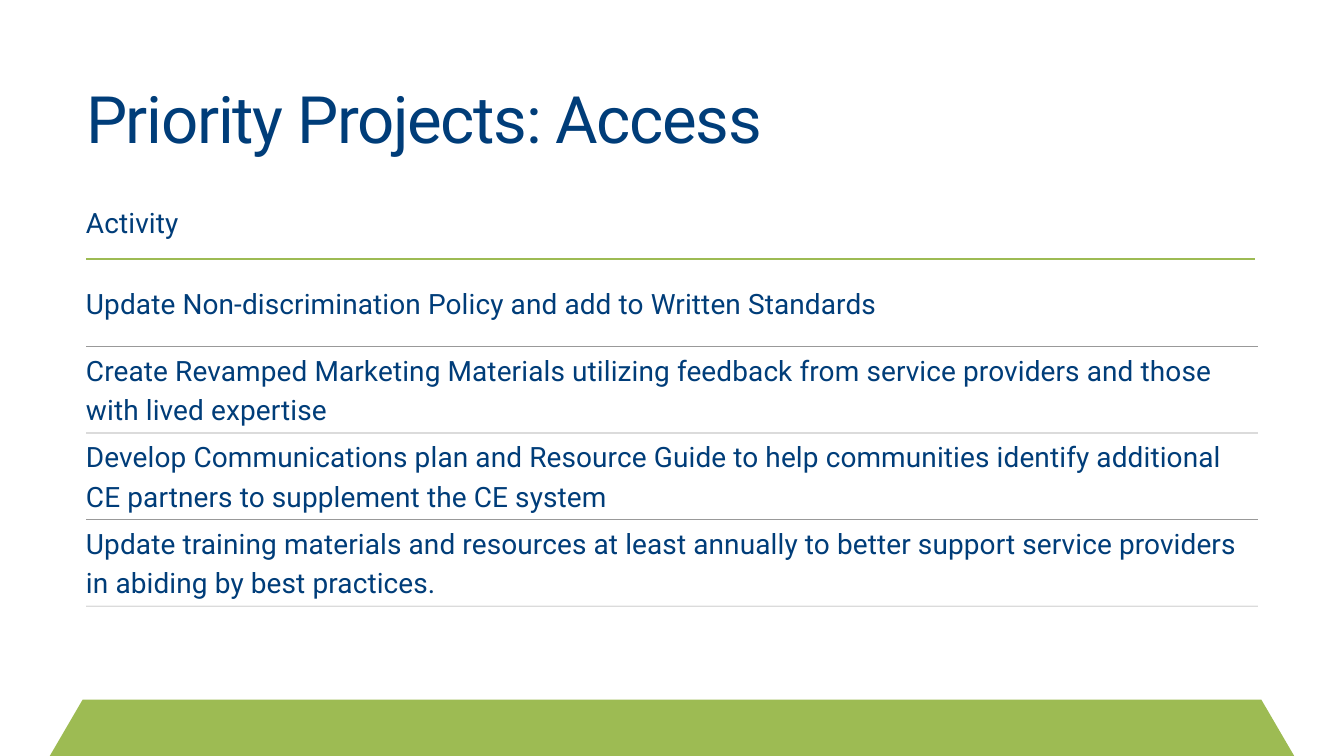
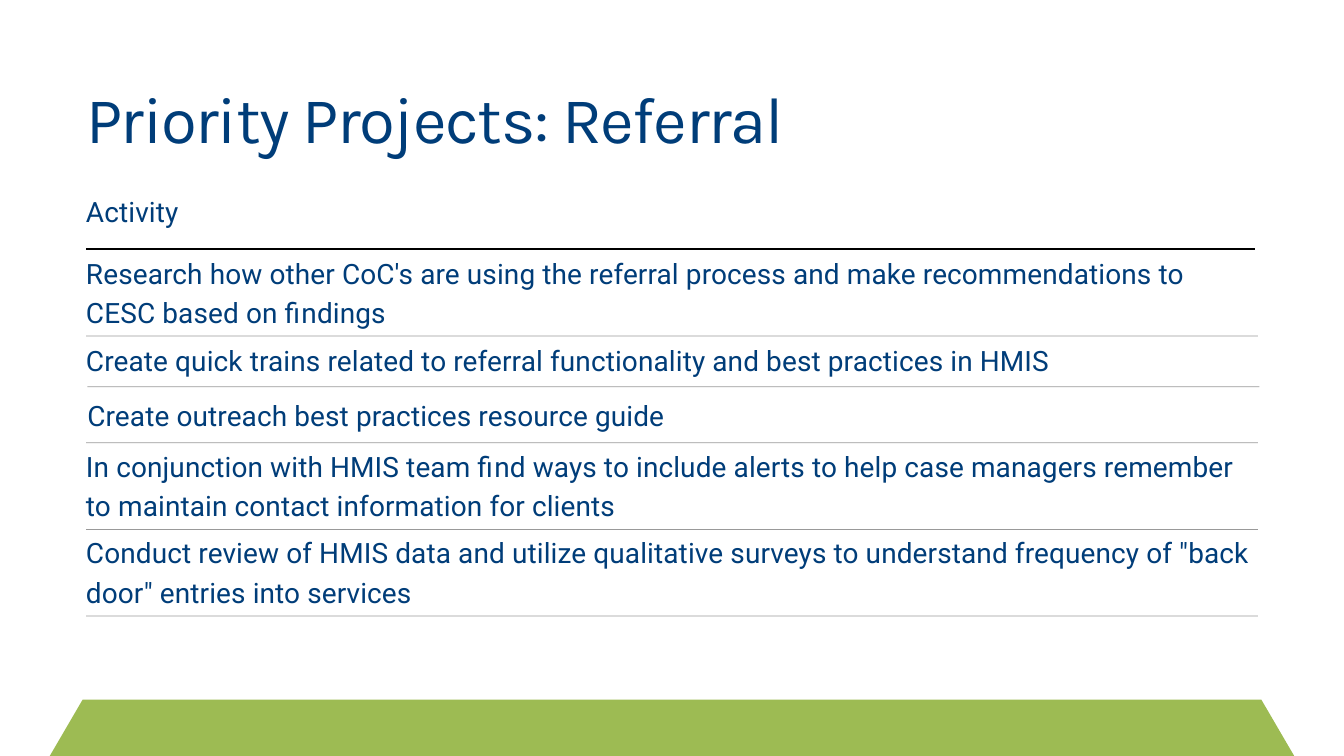
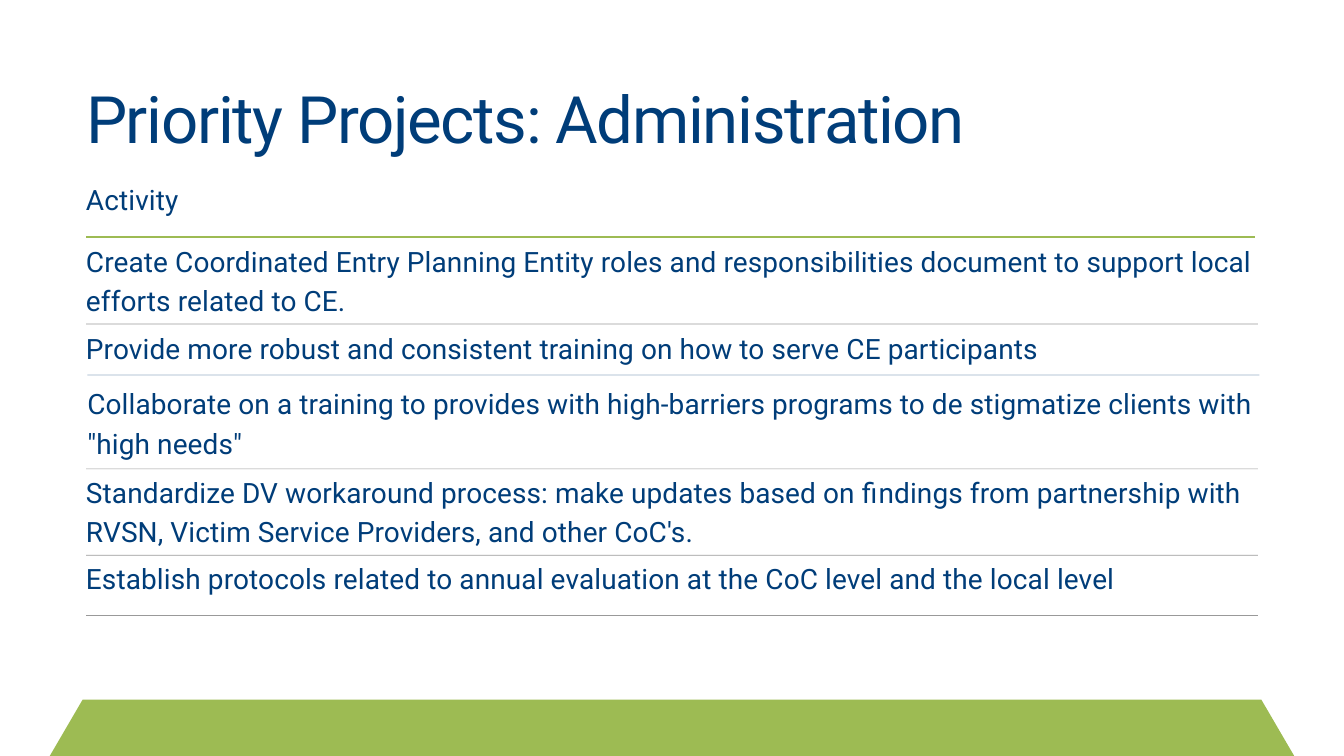
from lxml import etree
from pptx import Presentation
from pptx.dml.color import RGBColor
from pptx.enum.shapes import MSO_CONNECTOR
from pptx.enum.text import MSO_ANCHOR, MSO_AUTO_SIZE, PP_ALIGN
from pptx.oxml.ns import qn
from pptx.util import Pt

NAVY = RGBColor(0x00, 0x3D, 0x79)
GREEN = RGBColor(0x9D, 0xBB, 0x53)
BLACK = RGBColor(0x00, 0x00, 0x00)

LEFT = 92.16
NUDGED = 93.6  # left edge of the third activity and the rule above it
TEXT_WIDTH = 1254
RULE_WIDTH = 1255.68
LINE_HEIGHT = 42
HEADING_TO_RULE = 64.1

BAND_OUTLINE = [(1351.4, 749.5), (88.6, 749.5), (53.3, 810),
                (88.6, 870.5), (1351.4, 870.5), (1386.7, 810)]

# Each activity: text, left, top, rule left, rule height on the slide, rule colour
PROJECTS = [
    {"title": "Priority Projects: Access", "font": "Roboto", "title_width": 833,
     "heading_top": 213.8, "heading_rule": GREEN, "activities": [
         ("Update Non-discrimination Policy and add to Written Standards",
          LEFT, 301, LEFT, 371.2, BLACK),
         ("Create Revamped Marketing Materials utilizing feedback from service "
          "providers and those with lived expertise",
          LEFT, 373, LEFT, 463.9, BLACK),
         ("Develop Communications plan and Resource Guide to help communities "
          "identify additional CE partners to supplement the CE system",
          LEFT, 465.3, LEFT, 556.6, BLACK),
         ("Update training materials and resources at least annually to better "
          "support service providers in abiding by best practices.",
          LEFT, 558, LEFT, 649.4, BLACK)]},
    {"title": "Priority Projects: Referral", "font": "Karla", "title_width": 1287.4,
     "heading_top": 202.3, "heading_rule": BLACK, "activities": [
         ("Research how other CoC's are using the referral process and make "
          "recommendations to CESC based on findings",
          LEFT, 268.6, LEFT, 360, BLACK),
         ("Create quick trains related to referral functionality and best "
          "practices in HMIS",
          LEFT, 361.6, NUDGED, 414.4, BLACK),
         ("Create outreach best practices resource guide",
          NUDGED, 421.5, LEFT, 474.4, BLACK),
         ("In conjunction with HMIS team find ways to include alerts to help case "
          "managers remember to maintain contact information for clients",
          LEFT, 475.7, LEFT, 567.3, BLACK),
         ("Conduct review of HMIS data and utilize qualitative surveys to "
          "understand frequency of \"back door\" entries into services",
          LEFT, 568.2, LEFT, 660, BLACK)]},
    {"title": "Priority Projects: Administration", "font": "Roboto", "title_width": 1287.4,
     "heading_top": 190, "heading_rule": GREEN, "activities": [
         ("Create Coordinated Entry Planning Entity roles and responsibilities "
          "document to support local efforts related to CE.",
          LEFT, 256.1, LEFT, 347.2, BLACK),
         ("Provide more robust and consistent training on how to serve CE "
          "participants",
          LEFT, 349.2, NUDGED, 401.8, NAVY),
         ("Collaborate on a training to provides with high-barriers programs to "
          "de stigmatize clients with \"high needs\"",
          NUDGED, 408.5, LEFT, 502.4, BLACK),
         ("Standardize DV workaround process: make updates based on findings from "
          "partnership with RVSN, Victim Service Providers, and other CoC's.",
          LEFT, 503.7, LEFT, 594.9, BLACK),
         ("Establish protocols related to annual evaluation at the CoC level and "
          "the local level",
          LEFT, 596, LEFT, 659.5, BLACK)]},
]


def write(holder, text, left, top, width, height, font="Roboto", size=30,
          leading=LINE_HEIGHT, tracking=0.14):
    """Place a text shape and fill it with one navy, left-aligned paragraph."""
    holder.left, holder.top = Pt(left), Pt(top)
    holder.width, holder.height = Pt(width), Pt(height)
    frame = holder.text_frame
    frame.margin_left = frame.margin_right = frame.margin_top = frame.margin_bottom = 0
    frame.word_wrap = True
    frame.auto_size = MSO_AUTO_SIZE.SHAPE_TO_FIT_TEXT
    frame.vertical_anchor = MSO_ANCHOR.TOP
    paragraph = frame.paragraphs[0]
    paragraph.text = text
    paragraph.alignment = PP_ALIGN.LEFT
    paragraph.line_spacing = Pt(leading)
    paragraph.font.name = font
    paragraph.font.size = Pt(size)
    paragraph.font.color.rgb = NAVY
    paragraph.runs[0]._r.get_or_add_rPr().set("spc", str(round(tracking * 100)))


def add_rule(slide, left, y, width, colour, weight, opacity=100):
    rule = slide.shapes.add_connector(
        MSO_CONNECTOR.STRAIGHT, Pt(left), Pt(y), Pt(left + width), Pt(y))
    rule.line.color.rgb = colour
    rule.line.width = Pt(weight)
    properties = rule._element.spPr
    if opacity < 100:
        colour_element = properties.find(".//" + qn("a:srgbClr"))
        etree.SubElement(colour_element, qn("a:alpha")).set("val", str(opacity * 1000))
    etree.SubElement(properties, qn("a:effectLst"))


deck = Presentation()
deck.slide_width, deck.slide_height = Pt(1440), Pt(810)
title_only = deck.slide_layouts[5]

for project in PROJECTS:
    slide = deck.slides.add_slide(title_only)
    write(slide.shapes.title, project["title"], LEFT, 70, project["title_width"], 95,
          font=project["font"], size=70, leading=98, tracking=-1.4)

    heading_top = project["heading_top"]
    write(slide.shapes.add_textbox(0, 0, 0, 0), "Activity",
          LEFT, heading_top, 252, LINE_HEIGHT)
    add_rule(slide, LEFT, heading_top + HEADING_TO_RULE, 1252.8,
             project["heading_rule"], 2.25)

    for activity, left, top, rule_left, rule_y, rule_colour in project["activities"]:
        line_count = 2 if len(activity) > 90 else 1
        write(slide.shapes.add_textbox(0, 0, 0, 0), activity,
              left, top, TEXT_WIDTH, line_count * LINE_HEIGHT)
        add_rule(slide, rule_left, rule_y, RULE_WIDTH, rule_colour, 0.75, opacity=40)

    corners = [(Pt(x), Pt(y)) for x, y in BAND_OUTLINE]
    outline = slide.shapes.build_freeform(*corners[0])
    outline.add_line_segments(corners[1:], close=True)
    footer_band = outline.convert_to_shape()
    footer_band.shadow.inherit = False
    footer_band.fill.solid()
    footer_band.fill.fore_color.rgb = GREEN
    footer_band.line.fill.background()

deck.save("out.pptx")
